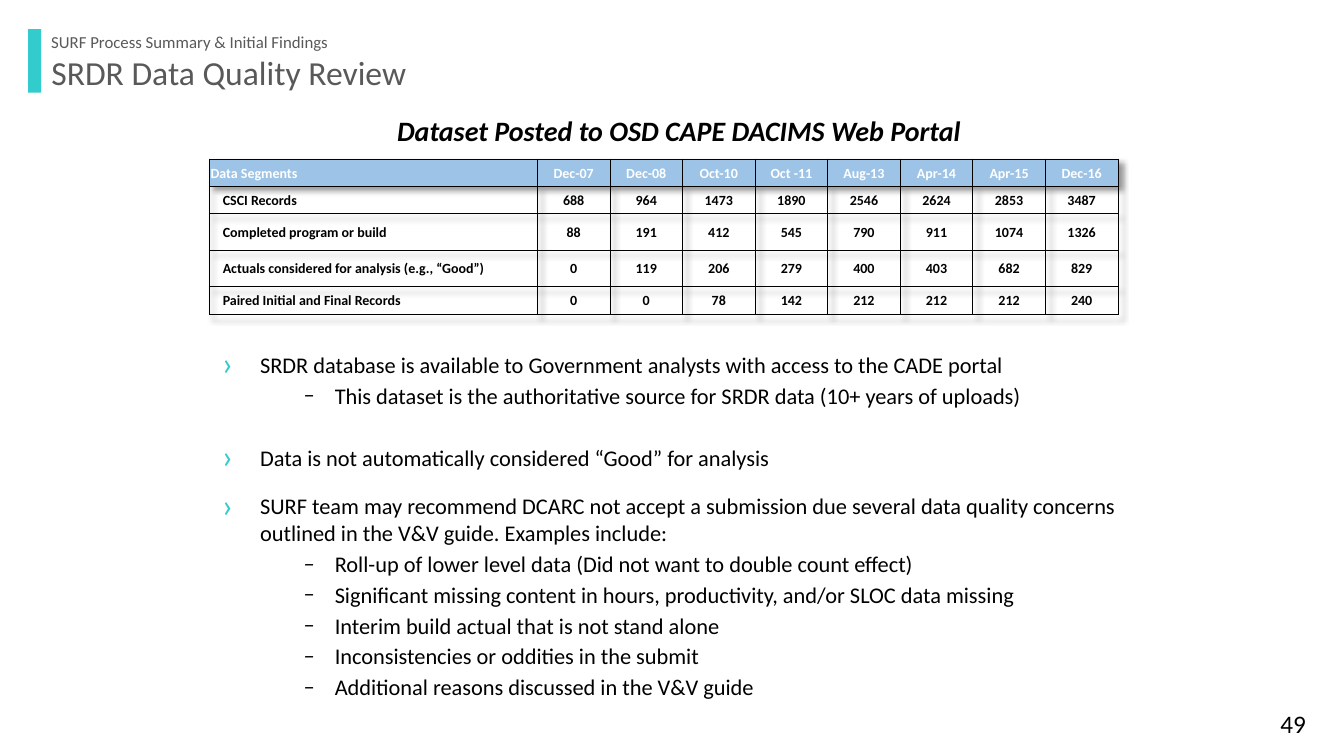
from dataclasses import dataclass
from typing import Any

from lxml.etree import SubElement
from pptx import Presentation
from pptx.dml.color import RGBColor
from pptx.enum.shapes import MSO_SHAPE as Shape
from pptx.enum.text import MSO_ANCHOR as Anchor, MSO_AUTO_SIZE as AutoSize, PP_ALIGN as Align
from pptx.oxml import parse_xml
from pptx.oxml.ns import nsdecls, qn
from pptx.util import Inches, Pt

FONT = "Calibri"
COLORS = {
    "accent": "33CCCC",
    "heading": "595959",
    "header": "9DC3E6",
    "text": "000000",
    "white": "FFFFFF",
}


@dataclass
class Label:
    text: str
    at: tuple[float, float, float, float]
    size: float
    color: str = "text"
    bold: bool = False
    italic: bool = False
    line_spacing: float = 1.0


@dataclass
class BulletStyle:
    char: str
    left: float
    hanging: float
    color: str
    percent: int


@dataclass
class Bullet:
    text: str
    style: BulletStyle
    space_before: float = 2.8
    line_spacing: float = 1.0


MAIN = BulletStyle("›", 0.38, 0.38, "accent", 150)
SUB = BulletStyle("–", 1.12, 0.31, "text", 100)

TITLE = Label("SRDR Data Quality Review", (0.41, 0.51, 5.28, 0.55), 24, "heading", line_spacing=0.9)
LABELS = [
    Label("SURF Process Summary & Initial Findings", (0.41, 0.29, 4.73, 0.3), 12, "heading",
          line_spacing=0.9),
    Label("Dataset Posted to OSD CAPE DACIMS Web Portal", (3.84, 1.08, 7.24, 0.44), 20,
          bold=True, italic=True),
    Label("49", (12.6, 6.98, 0.61, 0.4), 18),
]
BULLETS = [
    Bullet("SRDR database is available to Government analysts with access to the CADE portal",
           MAIN, 0, 1.5),
    Bullet("This dataset is the authoritative source for SRDR data (10+ years of uploads)", SUB),
    Bullet("Data is not automatically considered “Good” for analysis", MAIN, 15.5, 1.5),
    Bullet("SURF team may recommend DCARC not accept a submission due several data quality "
           "concerns outlined in the V&V guide. Examples include:", MAIN, 15.5),
    Bullet("Roll-up of lower level data (Did not want to double count effect)", SUB),
    Bullet("Significant missing content in hours, productivity, and/or SLOC data missing", SUB),
    Bullet("Interim build actual that is not stand alone", SUB),
    Bullet("Inconsistencies or oddities in the submit", SUB),
    Bullet("Additional reasons discussed in the V&V guide", SUB),
]
ROWS = [
    ["Data Segments", "Dec-07", "Dec-08", "Oct-10", "Oct -11", "Aug-13", "Apr-14", "Apr-15", "Dec-16"],
    ["CSCI Records", 688, 964, 1473, 1890, 2546, 2624, 2853, 3487],
    ["Completed program or build", 88, 191, 412, 545, 790, 911, 1074, 1326],
    ["Actuals considered for analysis (e.g., “Good”)", 0, 119, 206, 279, 400, 403, 682, 829],
    ["Paired Initial and Final Records", 0, 0, 78, 142, 212, 212, 212, 240],
]
ROW_HEIGHTS = [0.27, 0.27, 0.36, 0.36, 0.28]
COLUMN_WIDTHS = [3.25] + [0.72] * 8


def rgb(name: str) -> RGBColor:
    return RGBColor.from_string(COLORS[name])


def set_attrs(obj: Any, values: dict[str, Any]) -> None:
    for name, value in values.items():
        setattr(obj, name, value)


def place(sp: Any, at: tuple[float, float, float, float]) -> None:
    set_attrs(sp, dict(zip(("left", "top", "width", "height"), map(Inches, at))))


def add_run(p: Any, text: str, size: float, color: str = "text",
            bold: bool = False, italic: bool = False) -> None:
    r = p.add_run()
    r.text = text
    set_attrs(r.font, {"name": FONT, "size": Pt(size), "bold": bold, "italic": italic})
    r.font.color.rgb = rgb(color)


def fill_label(sp: Any, label: Label) -> None:
    place(sp, label.at)
    tf = sp.text_frame
    set_attrs(tf, {"word_wrap": True, "auto_size": AutoSize.NONE, "vertical_anchor": Anchor.TOP})
    p = tf.paragraphs[0]
    set_attrs(p, {"alignment": Align.LEFT, "line_spacing": label.line_spacing})
    add_run(p, label.text, label.size, label.color, label.bold, label.italic)


def set_bullet(p: Any, style: BulletStyle) -> None:
    pPr = p._p.get_or_add_pPr()
    pPr.set("marL", str(Inches(style.left)))
    pPr.set("indent", str(-Inches(style.hanging)))
    SubElement(SubElement(pPr, qn("a:buClr")), qn("a:srgbClr"), val=COLORS[style.color])
    SubElement(pPr, qn("a:buSzPct"), val=str(style.percent * 1000))
    SubElement(pPr, qn("a:buFont"), typeface=FONT)
    SubElement(pPr, qn("a:buChar"), char=style.char)


def fill_bullets(sp: Any, bullets: list[Bullet]) -> None:
    place(sp, (2.1, 3.25, 9.23, 4.28))
    tf = sp.text_frame
    set_attrs(tf, {"word_wrap": True, "auto_size": AutoSize.NONE, "vertical_anchor": Anchor.TOP})
    margins = ("margin_left", "margin_top", "margin_right", "margin_bottom")
    set_attrs(tf, dict.fromkeys(margins, Inches(0.1)))
    for i, bullet in enumerate(bullets):
        p = tf.add_paragraph() if i else tf.paragraphs[0]
        set_bullet(p, bullet.style)
        set_attrs(p, {"alignment": Align.LEFT, "line_spacing": bullet.line_spacing,
                      "space_before": Pt(bullet.space_before)})
        add_run(p, bullet.text, 16)


def set_borders(cell: Any, widths: dict[str, float]) -> None:
    """Draw the cell's sides; widths maps L, R, T, B to points, in that order."""
    tcPr = cell._tc.get_or_add_tcPr()
    for side, width in widths.items():
        ln = SubElement(tcPr, qn(f"a:ln{side}"), w=str(Pt(width)))
        SubElement(SubElement(ln, qn("a:solidFill")), qn("a:srgbClr"), val=COLORS["text"])


def add_records_table(slide: Any) -> None:
    frame = slide.shapes.add_table(len(ROWS), len(COLUMN_WIDTHS), Inches(2.08), Inches(1.58),
                                   Inches(sum(COLUMN_WIDTHS)), Inches(sum(ROW_HEIGHTS)))
    table = frame.table
    set_attrs(table, {"first_row": False, "horz_banding": False})
    table._tbl.tblPr.insert(0, parse_xml(
        f'<a:effectLst {nsdecls("a")}><a:outerShdw blurRad="50800" dist="50800" dir="2700000">'
        '<a:srgbClr val="000000"><a:alpha val="40000"/></a:srgbClr></a:outerShdw></a:effectLst>'))
    for column, width in zip(table.columns, COLUMN_WIDTHS):
        column.width = Inches(width)
    for row, height in zip(table.rows, ROW_HEIGHTS):
        row.height = Inches(height)
    for i, values in enumerate(ROWS):
        for j, value in enumerate(values):
            cell = table.cell(i, j)
            is_header, is_name = i == 0, j == 0
            indent = 0.13 if is_name and not is_header else 0.01
            set_attrs(cell, {"margin_left": Inches(indent), "margin_right": Inches(0.01),
                             "margin_top": Inches(0.01), "margin_bottom": 0,
                             "vertical_anchor": Anchor.MIDDLE})
            set_borders(cell, {"L": 1 if is_name else 0.5, "R": 0.5, "T": 1 if is_header else 0.5,
                               "B": 1 if i == len(ROWS) - 1 else 0.5})
            if is_header:
                cell.fill.solid()
                cell.fill.fore_color.rgb = rgb("header")
            else:
                cell.fill.background()
            p = cell.text_frame.paragraphs[0]
            p.alignment = Align.LEFT if is_name else Align.CENTER
            add_run(p, str(value), 10, "white" if is_header else "text", bold=True)


def add_accent_bar(slide: Any) -> None:
    sp = slide.shapes.add_shape(Shape.RECTANGLE, *map(Inches, (0.28, 0.29, 0.13, 0.63)))
    sp.shadow.inherit = False
    sp.fill.solid()
    sp.fill.fore_color.rgb = rgb("accent")
    sp.line.fill.background()


def main() -> None:
    prs = Presentation()
    set_attrs(prs, {"slide_width": Inches(13.33), "slide_height": Inches(7.5)})
    slide = prs.slides.add_slide(prs.slide_layouts[1])
    add_accent_bar(slide)
    fill_label(slide.shapes.title, TITLE)
    fill_bullets(slide.placeholders[1], BULLETS)
    for label in LABELS:
        fill_label(slide.shapes.add_textbox(0, 0, 0, 0), label)
    add_records_table(slide)
    prs.save("out.pptx")


if __name__ == "__main__":
    main()
